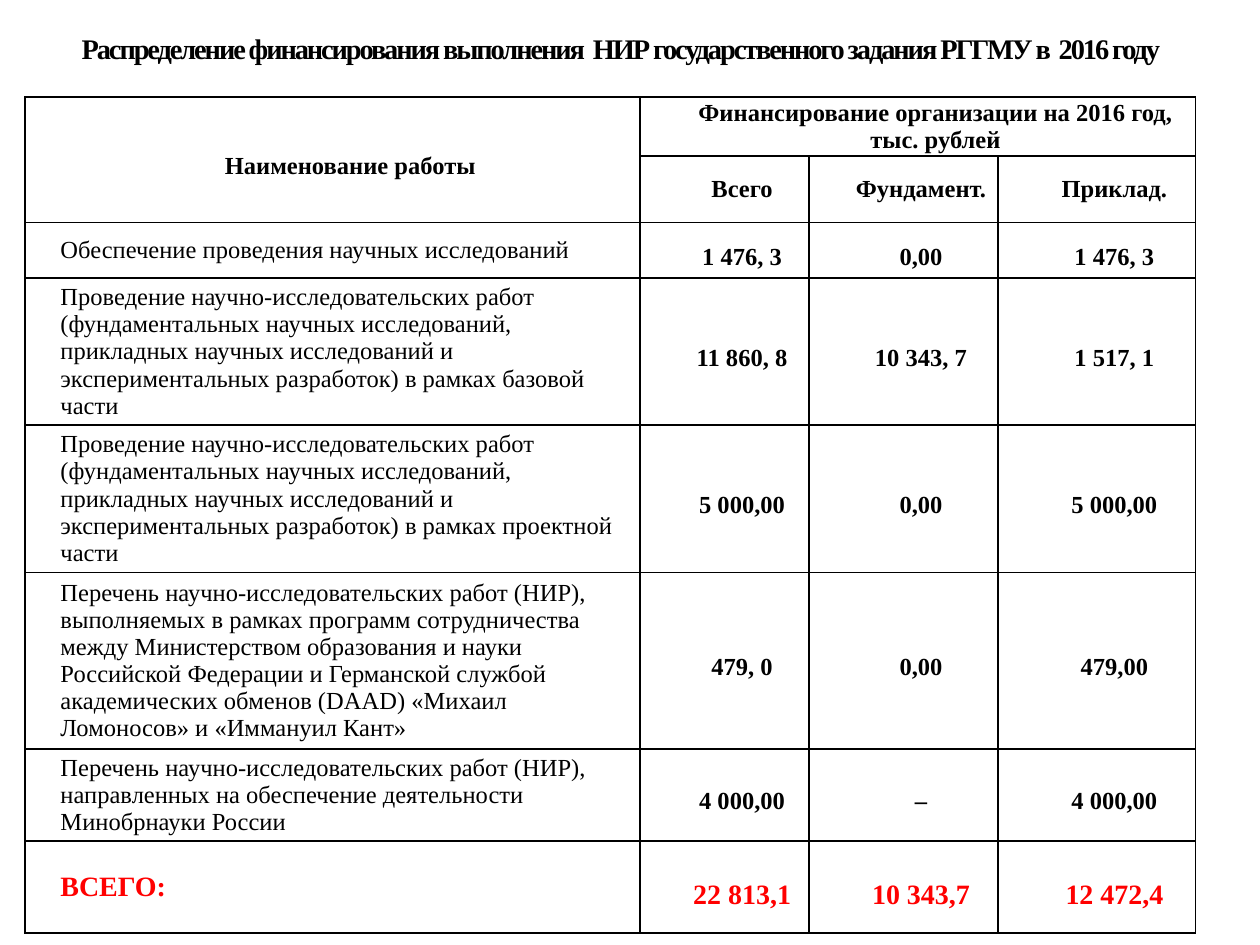
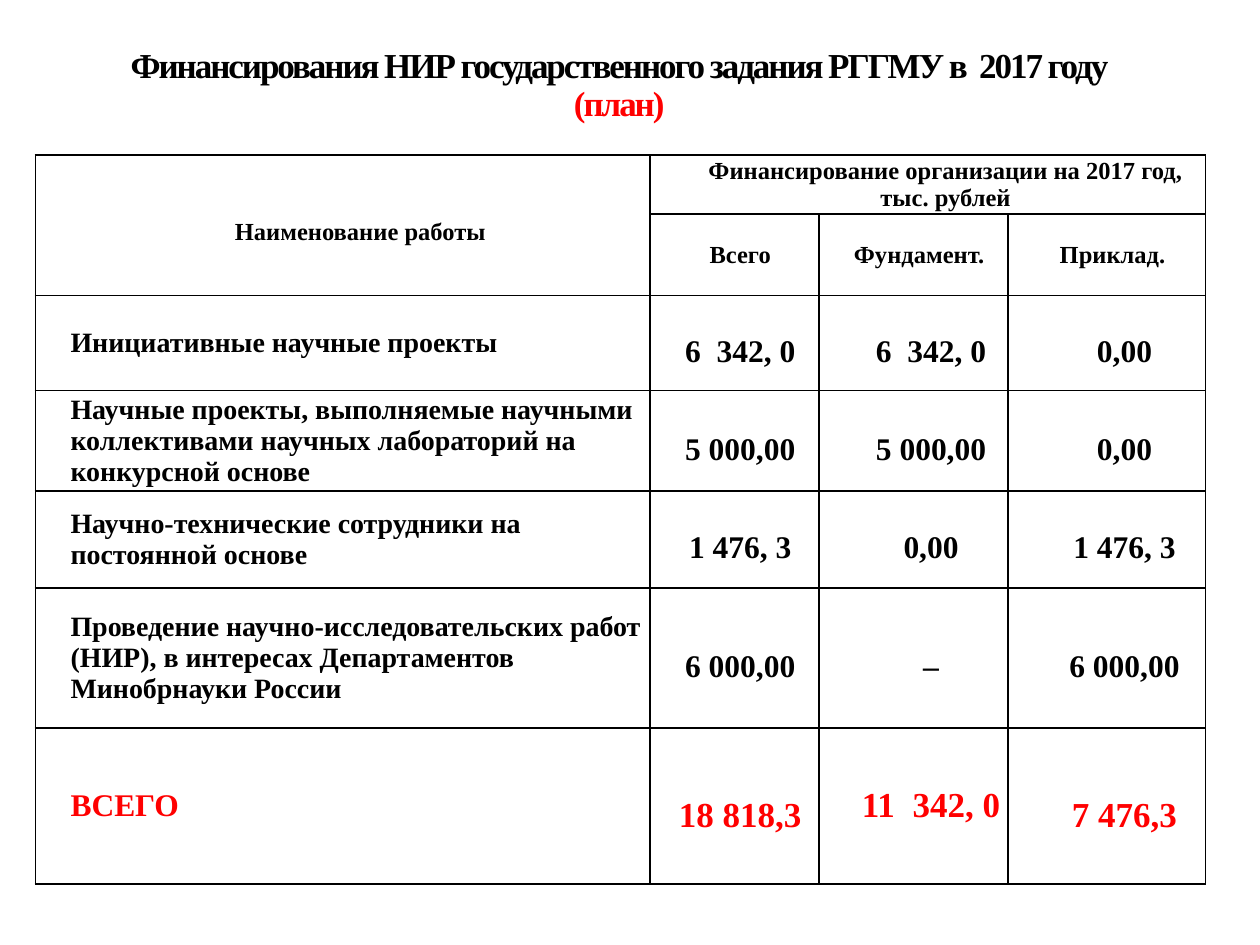
import pptx
import pptx.dml.color
import pptx.enum.text
import pptx.oxml
import pptx.util
from pptx.util import Inches

# Content: each work row is (name, total, fundamental, applied)
COLUMN_HEADS = ("Всего", "Фундамент.", "Приклад.")
RESEARCH = ("Проведение научно-исследовательских работ (фундаментальных научных исследований, "
            "прикладных научных исследований и экспериментальных разработок) в рамках {} части")
PLANS = [
    dict(
        title=[("Распределение финансирования выполнения  НИР "
                "государственного задания РГГМУ в  2016 году", "000000")],
        title_box=(0.51, 0.13, 8.83, 0.54), title_size=16.2,
        year=2016, table_at=(0.2, 0.77),
        row_heights=(0.46, 0.53, 0.44, 1.14, 1.14, 1.36, 0.73, 0.73),
        works=[
            ("Обеспечение проведения научных исследований", "1 476, 3", "0,00", "1 476, 3"),
            (RESEARCH.format("базовой"), "11 860, 8", "10 343, 7", "1 517, 1"),
            (RESEARCH.format("проектной"), "5 000,00", "0,00", "5 000,00"),
            ("Перечень научно-исследовательских работ (НИР), выполняемых в рамках программ "
             "сотрудничества между Министерством образования и науки Российской Федерации и "
             "Германской службой академических обменов (DAAD) «Михаил Ломоносов» и "
             "«Иммануил Кант»", "479, 0", "0,00", "479,00"),
            ("Перечень научно-исследовательских работ (НИР), направленных на обеспечение "
             "деятельности Минобрнауки России", "4 000,00", "–", "4 000,00"),
        ],
        total=("ВСЕГО:", "22 813,1", "10 343,7", "12 472,4"),
        name_style=dict(size=14, bold=False), value_size=14,
        total_sizes=(16, 16), total_spacings=(1, 1.5, 1.5, 1.5),
        head_margin=0.28, value_margins=(0.28, 0.28, 0.28),
    ),
    dict(
        title=[("Финансирования НИР государственного задания РГГМУ в  2017 году", "000000"),
               ("(план)", "FF0000")],
        title_box=(0.5, 0.3, 8.83, 0.77), title_size=20,
        year=2017, table_at=(0.28, 1.23),
        row_heights=(0.44, 0.65, 0.75, 0.75, 0.77, 1.11, 1.24),
        works=[
            ("Инициативные научные проекты", "6  342, 0", "6  342, 0", "0,00"),
            ("Научные проекты, выполняемые научными коллективами научных лабораторий "
             "на конкурсной основе", "5 000,00", "5 000,00", "0,00"),
            ("Научно-технические сотрудники на постоянной основе",
             "1 476, 3", "0,00", "1 476, 3"),
            ("Проведение научно-исследовательских работ (НИР), в интересах Департаментов "
             "Минобрнауки России", "6 000,00", "–", "6 000,00"),
        ],
        total=("ВСЕГО", "18 818,3", "11  342, 0", "7 476,3"),
        name_style=dict(size=16, bold=True), value_size=18,
        total_sizes=(18, 20), total_spacings=(1, 1.5, 1, 1.5),
        head_margin=0.09, value_margins=(0.09, 0.28, 0.28),
    ),
]

# Shared look
FONT = "Times New Roman"
BLACK, RED = "000000", "FF0000"
COLUMN_WIDTHS = (4.88, 1.34, 1.5, 1.57)
NAME_MARGIN = 0.28
LEFT = pptx.enum.text.PP_ALIGN.LEFT
CENTER = pptx.enum.text.PP_ALIGN.CENTER
MIDDLE = pptx.enum.text.MSO_ANCHOR.MIDDLE
NO_MARGINS = dict.fromkeys(("margin_left", "margin_right", "margin_top", "margin_bottom"), 0)


def set_all(target, values):
    for name, value in values.items():
        setattr(target, name, value)


def add_span(para, text, size, color=BLACK, bold=True):
    span = para.add_run()
    span.text = text
    set_all(span.font, dict(name=FONT, size=pptx.util.Pt(size), bold=bold))
    span.font.color.rgb = pptx.dml.color.RGBColor.from_string(color)
    return span


def add_title(page, plan):
    box = page.shapes.add_textbox(*map(Inches, plan["title_box"]))
    set_all(box.text_frame, dict(NO_MARGINS, word_wrap=True, vertical_anchor=MIDDLE))
    para = box.text_frame.paragraphs[0]
    set_all(para, dict(alignment=CENTER, line_spacing=0.9))
    for number, (text, color) in enumerate(plan["title"]):
        if number:
            para.add_line_break()
        span = add_span(para, text, plan["title_size"], color)
        span.font._element.set("spc", "-120")


def draw_borders(cell):
    properties = cell._tc.get_or_add_tcPr()
    for position, side in enumerate(("lnL", "lnR", "lnT", "lnB")):
        properties.insert(position, pptx.oxml.parse_xml(
            f'<a:{side} xmlns:a="http://schemas.openxmlformats.org/drawingml/2006/main" '
            f'w="12700"><a:solidFill><a:srgbClr val="{BLACK}"/></a:solidFill></a:{side}>'))


def fill_cell(cell, text, size, margin=NAME_MARGIN, align=CENTER, spacing=1, **style):
    para = cell.text_frame.paragraphs[0]
    set_all(para, dict(alignment=align, line_spacing=float(spacing)))
    para._p.get_or_add_pPr().set("marL", str(Inches(margin)))
    para._p.get_or_add_pPr().set("indent", "0")
    add_span(para, text, size, **style)


def add_funding_table(page, plan):
    heights = plan["row_heights"]
    frame = page.shapes.add_table(
        len(heights), len(COLUMN_WIDTHS), *map(Inches, plan["table_at"]),
        Inches(sum(COLUMN_WIDTHS)), Inches(sum(heights)))
    table = frame.table
    set_all(table, dict(first_row=False, horz_banding=False))
    for column, width in zip(table.columns, COLUMN_WIDTHS):
        column.width = Inches(width)
    for row, height in zip(table.rows, heights):
        row.height = Inches(height)
    for cell in table.iter_cells():
        set_all(cell, dict(NO_MARGINS, vertical_anchor=MIDDLE))
        cell.fill.background()
        draw_borders(cell)

    # Two header rows
    table.cell(0, 0).merge(table.cell(1, 0))
    table.cell(0, 1).merge(table.cell(0, 3))
    fill_cell(table.cell(0, 0), "Наименование работы", 14, spacing=1.5)
    fill_cell(table.cell(0, 1),
              f"Финансирование организации на {plan['year']} год, тыс. рублей", 14)
    for column, head in enumerate(COLUMN_HEADS, 1):
        fill_cell(table.cell(1, column), head, 14, plan["head_margin"])

    # Works
    margins = (NAME_MARGIN, *plan["value_margins"])
    for row, (name, *values) in enumerate(plan["works"], 2):
        fill_cell(table.cell(row, 0), name, align=LEFT, **plan["name_style"])
        for column, value in enumerate(values, 1):
            fill_cell(table.cell(row, column), value, plan["value_size"],
                      margins[column], spacing=1.5)

    # Totals
    name_size, value_size = plan["total_sizes"]
    for column, text in enumerate(plan["total"]):
        fill_cell(table.cell(len(heights) - 1, column), text,
                  value_size if column else name_size, margins[column],
                  CENTER if column else LEFT, plan["total_spacings"][column], color=RED)


def main():
    deck = pptx.Presentation()
    set_all(deck, dict(slide_width=Inches(10), slide_height=Inches(7.5)))
    for plan in PLANS:
        page = deck.slides.add_slide(deck.slide_layouts[6])
        add_title(page, plan)
        add_funding_table(page, plan)
    deck.save("out.pptx")


if __name__ == "__main__":
    main()
